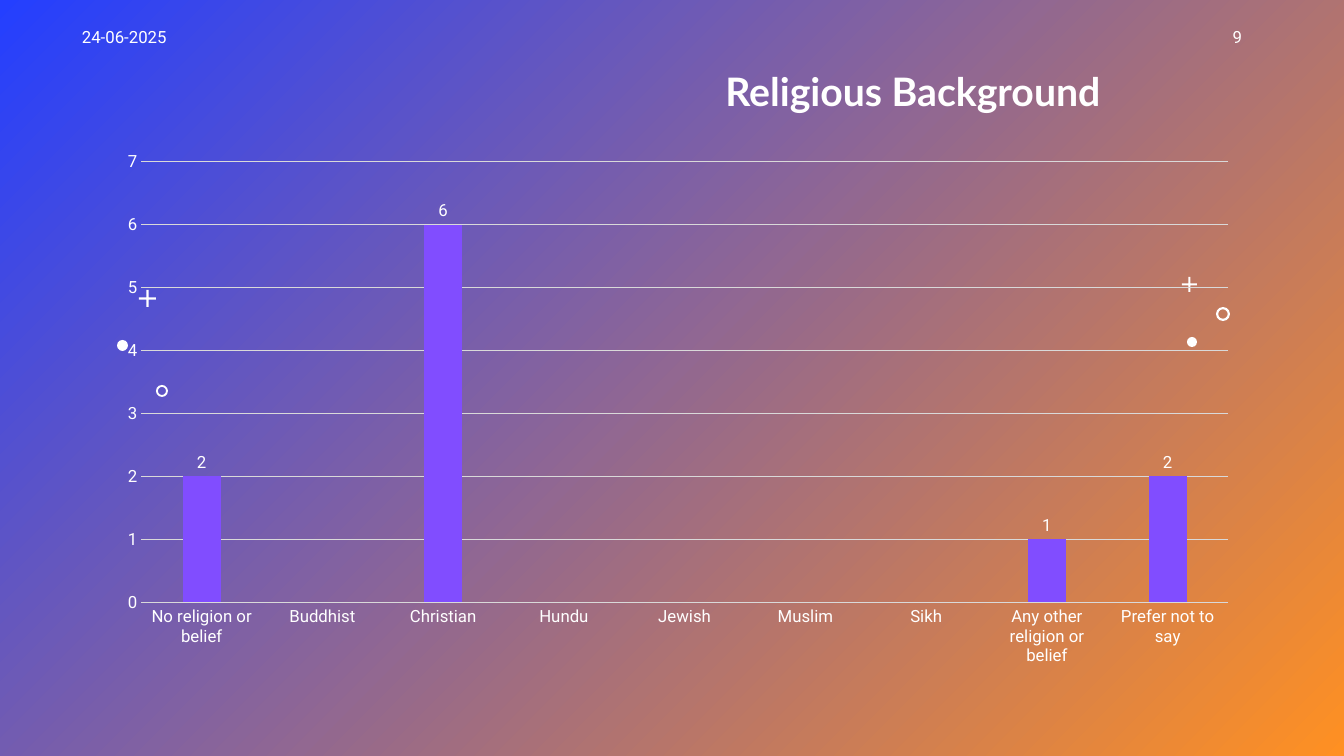
from pptx import Presentation
from pptx.chart.data import CategoryChartData
from pptx.dml.color import RGBColor
from pptx.enum.chart import XL_CHART_TYPE, XL_LABEL_POSITION, XL_TICK_MARK
from pptx.enum.shapes import MSO_SHAPE
from pptx.enum.text import MSO_ANCHOR, PP_ALIGN
from pptx.util import Emu, Pt

COLUMN = XL_CHART_TYPE.COLUMN_CLUSTERED
ABOVE = XL_LABEL_POSITION.OUTSIDE_END
NO_TICK = XL_TICK_MARK.NONE
DOT, RING, PLUS = MSO_SHAPE.OVAL, MSO_SHAPE.DONUT, MSO_SHAPE.CROSS
LEFT, RIGHT = PP_ALIGN.LEFT, PP_ALIGN.RIGHT
TOP = MSO_ANCHOR.TOP

WIDE, HIGH = 1344, 756
SCALE = 12192000 / WIDE
WHITE, GRID, VIOLET = "FFFFFF", "D9D9D9", "814DFF"
BLUE, ORANGE = "243FFF", "FF9022"

# kind, left, top, size
MARKS = [
    (DOT, 1187, 337, 10),
    (PLUS, 1182, 277, 15),
    (RING, 1216, 307, 14),
    (PLUS, 139, 290, 17),
    (DOT, 117, 340, 11),
    (RING, 156, 385, 12),
]
ADJUST = {RING: 0.16, PLUS: 0.43}

FAITHS = [
    ("No religion or belief", 2),
    ("Buddhist", None),
    ("Christian", 6),
    ("Hundu", None),
    ("Jewish", None),
    ("Muslim", None),
    ("Sikh", None),
    ("Any other religion or belief", 1),
    ("Prefer not to say", 2),
]


def px(num):
    return Emu(round(num * SCALE))


def color(code):
    return RGBColor.from_string(code)


def set_font(font, size, name="Roboto", bold=False):
    font.size = Pt(size)
    font.name = name
    font.bold = bold
    font.color.rgb = color(WHITE)


def set_line(line, code):
    line.color.rgb = color(code)
    line.width = Pt(0.75)


def paint_back(slide):
    fill = slide.background.fill
    fill.gradient()
    fill.gradient_angle = 315
    for stop, code in zip(fill.gradient_stops, (BLUE, ORANGE)):
        stop.color.rgb = color(code)


def add_mark(slide, kind, left, top, size):
    mark = slide.shapes.add_shape(kind, px(left), px(top), px(size), px(size))
    mark.shadow.inherit = False
    mark.fill.solid()
    mark.fill.fore_color.rgb = color(WHITE)
    mark.line.fill.background()
    if kind in ADJUST:
        mark.adjustments[0] = ADJUST[kind]


def add_label(slide, text, left, align):
    box = slide.shapes.add_textbox(px(left), px(22), px(302), px(40))
    box.text_frame.word_wrap = True
    para = box.text_frame.paragraphs[0]
    para.text = text
    para.alignment = align
    set_font(para.font, 12)


def set_title(slide, text):
    title = slide.shapes.title
    title.left, title.top = px(569), px(62)
    title.width, title.height = px(551), px(57)
    frame = title.text_frame
    frame.vertical_anchor = TOP
    frame.word_wrap = True
    para = frame.paragraphs[0]
    para.text = text
    para.alignment = RIGHT
    set_font(para.font, 28, "Lato", True)


def style_axes(chart):
    for axis in (chart.category_axis, chart.value_axis):
        axis.major_tick_mark = axis.minor_tick_mark = NO_TICK
        set_font(axis.tick_labels.font, 12)
    set_line(chart.category_axis.format.line, GRID)
    scale = chart.value_axis
    scale.minimum_scale, scale.maximum_scale = 0, 7
    scale.major_unit = 1
    scale.format.line.fill.background()
    set_line(scale.major_gridlines.format.line, GRID)


def add_columns(slide):
    data = CategoryChartData()
    data.categories = [name for name, count in FAITHS]
    data.add_series("Series 1", [count for name, count in FAITHS])
    chart = slide.shapes.add_chart(
        COLUMN, px(105), px(141), px(1146), px(536), data).chart
    chart.has_title = chart.has_legend = False
    set_font(chart.font, 12)
    style_axes(chart)

    plot = chart.plots[0]
    plot.vary_by_categories = False
    plot.gap_width, plot.overlap = 219, -27
    bars = plot.series[0]
    bars.invert_if_negative = False
    bars.format.fill.solid()
    bars.format.fill.fore_color.rgb = color(VIOLET)
    bars.format.line.fill.background()
    labels = bars.data_labels
    labels.show_value = True
    labels.position = ABOVE
    set_font(labels.font, 12)


def main():
    deck = Presentation()
    deck.slide_width, deck.slide_height = px(WIDE), px(HIGH)
    slide = deck.slides.add_slide(deck.slide_layouts[5])
    paint_back(slide)
    for mark in MARKS:
        add_mark(slide, *mark)
    add_columns(slide)
    set_title(slide, "Religious Background ")
    add_label(slide, "24-06-2025", 72, LEFT)
    add_label(slide, "9", 950, RIGHT)
    deck.save("out.pptx")


if __name__ == "__main__":
    main()
